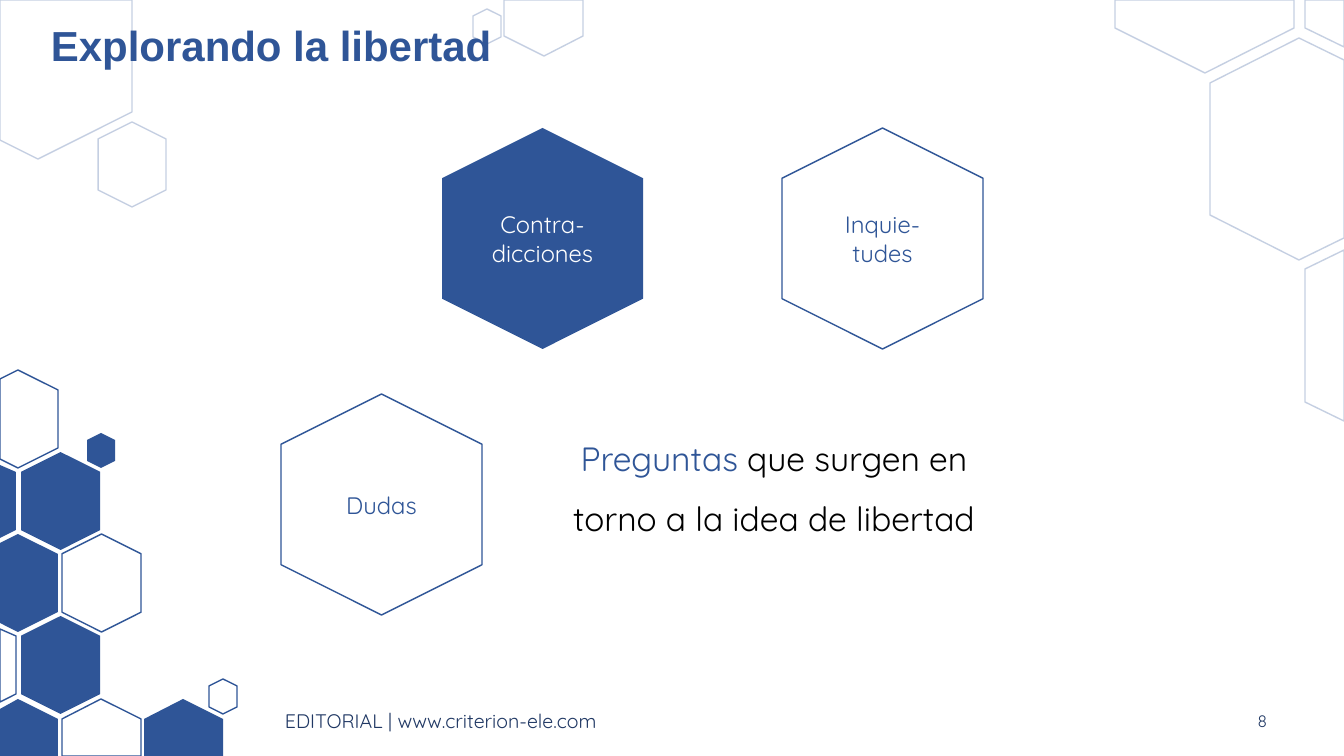
from pptx import Presentation
from pptx.dml.color import RGBColor
from pptx.enum.shapes import MSO_SHAPE
from pptx.enum.text import MSO_ANCHOR, PP_ALIGN
from pptx.oxml.ns import qn
from pptx.util import Emu, Pt
from lxml.etree import SubElement

EMU_PER_PX = 914400 / 100.8
COLORS = {"blue": "2F5597", "navy": "203864", "white": "FFFFFF", "black": "000000"}
FAINT = 28  # line opacity in percent

LABEL = {"name": "Quicksand", "size": Pt(17)}
FOOTER = {"name": "Quicksand", "size": Pt(14)}
NUMBER = {"name": "Quicksand", "size": Pt(12)}
TITLE = {"name": "Arial", "size": Pt(30), "bold": True}
QUESTION = {"name": "Quicksand", "size": Pt(24)}

# Hexagons cut off by the slide edge: outline points
TOP_CUT = [
    [(504, 0), (583, 0), (583, 36), (544, 56), (504, 36)],
    [(1115, 0), (1294, 0), (1294, 28), (1205, 73), (1115, 28)],
    [(1305, 0), (1344, 0), (1344, 47), (1305, 28)],
    [(1299, 38), (1344, 60), (1344, 238), (1299, 260), (1210, 215), (1210, 83)],
    [(0, 0), (132, 0), (132, 112), (38, 159), (0, 140)],
    [(1344, 250), (1344, 421), (1305, 402), (1305, 269)],
]
LEFT_HALF = [(18, 370), (58, 390), (58, 448), (18, 468), (0, 459), (0, 379)]
LEFT_SLIVER = [(0, 465), (16, 472), (16, 530), (0, 538)]
BOTTOM_CORNER = [(18, 699), (58, 719), (58, 756), (0, 756), (0, 709)]
BOTTOM_CUT = [(101, 699), (141, 719), (141, 756), (62, 756), (62, 719)]
ROW_STEP = 164
COLUMN_STEP = 82

# Whole hexagons: left, top
CELL = (79, 98)
DOT = (28, 35)
TOPIC = (201, 221)


def px(value):
    return Emu(round(value * EMU_PER_PX))


def rgb(color):
    return RGBColor.from_string(COLORS[color])


def paint(shape, fill, line=None, opacity=100):
    shape.shadow.inherit = False
    if fill:
        shape.fill.solid()
        shape.fill.fore_color.rgb = rgb(fill)
    else:
        shape.fill.background()
    if not line:
        shape.line.fill.background()
        return
    shape.line.color.rgb = rgb(line)
    shape.line.width = Pt(1)
    if opacity < 100:
        line_color = shape.line._ln.find(".//" + qn("a:srgbClr"))
        SubElement(line_color, qn("a:alpha"), val=str(opacity * 1000))


def add_hexagon(slide, left, top, size, fill, line=None, opacity=100):
    """Place a hexagon standing on a corner; left, top and size are as seen."""
    width, height = size
    shift = (height - width) / 2
    hexagon = slide.shapes.add_shape(
        MSO_SHAPE.HEXAGON, px(left - shift), px(top + shift), px(height), px(width))
    hexagon.rotation = 90
    paint(hexagon, fill, line, opacity)
    return hexagon


def add_cut_hexagon(slide, points, fill, line=None, opacity=100):
    builder = slide.shapes.build_freeform(*points[0], scale=EMU_PER_PX)
    builder.add_line_segments(points[1:], close=True)
    paint(builder.convert_to_shape(), fill, line, opacity)


def moved(points, dx, dy):
    return [(x + dx, y + dy) for x, y in points]


def write(frame, runs, font_format, align=PP_ALIGN.LEFT, spacing=1.0):
    """Fill a text frame with one paragraph of (text, color) runs."""
    frame.word_wrap = True
    frame.vertical_anchor = MSO_ANCHOR.MIDDLE
    paragraph = frame.paragraphs[0]
    paragraph.alignment = align
    paragraph.line_spacing = spacing
    for text, color in runs:
        run = paragraph.add_run()
        run.text = text
        run.font.color.rgb = rgb(color)
        for attribute, value in font_format.items():
            setattr(run.font, attribute, value)


def add_text(slide, box, runs, font_format, **layout):
    frame = slide.shapes.add_textbox(*map(px, box)).text_frame
    write(frame, runs, font_format, **layout)


def add_topic(slide, left, top, label, color, fill=None, line=None):
    frame = add_hexagon(slide, left, top, TOPIC, fill, line).text_frame
    frame._txBody.bodyPr.set("vert", "vert270")
    write(frame, [(label, color)], LABEL, PP_ALIGN.CENTER)


def add_top_decoration(slide):
    add_hexagon(slide, 473, 9, DOT, "white", "blue", FAINT)
    for points in TOP_CUT:
        add_cut_hexagon(slide, points, "white", "blue", FAINT)
    add_hexagon(slide, 98, 122, (68, 85), "white", "blue", FAINT)


def add_honeycomb(slide):
    for row, (half, sliver, outer) in enumerate([
            (("white", "blue"), ("blue",), ("white",)),
            (("blue",), ("white", "blue"), ("white", "blue"))]):
        down = row * ROW_STEP
        add_cut_hexagon(slide, moved(LEFT_HALF, 0, down), *half)
        add_hexagon(slide, 62, 370 + down, CELL, *outer)
        add_cut_hexagon(slide, moved(LEFT_SLIVER, 0, down), *sliver)
        add_hexagon(slide, 21, 452 + down, CELL, "blue")
    add_cut_hexagon(slide, BOTTOM_CORNER, "blue")
    add_cut_hexagon(slide, BOTTOM_CUT, "white", "blue")
    add_cut_hexagon(slide, moved(BOTTOM_CUT, COLUMN_STEP, 0), "blue")
    add_hexagon(slide, 209, 679, DOT, "white", "blue")
    add_hexagon(slide, 87, 433, DOT, "blue")


def main():
    deck = Presentation()
    deck.slide_width, deck.slide_height = px(1344), px(756)
    slide = deck.slides.add_slide(deck.slide_layouts[6])

    add_top_decoration(slide)
    add_honeycomb(slide)

    add_text(slide, (275, 701, 658, 40),
             [("EDITORIAL | www.criterion-ele.com", "navy")], FOOTER)
    add_text(slide, (1177, 701, 100, 40), [("8", "navy")], NUMBER,
             align=PP_ALIGN.RIGHT)
    add_text(slide, (41, 18, 1165, 60), [("Explorando la libertad", "blue")], TITLE,
             spacing=0.9)

    add_topic(slide, 782, 128, "Inquie-tudes", "blue", line="blue")
    add_topic(slide, 281, 394, "Dudas", "blue", line="blue")
    add_topic(slide, 442, 128, "Contra-dicciones", "white", fill="blue")

    add_text(slide, (531, 398, 486, 160),
             [("Preguntas", "blue"),
              (" que surgen en torno a la idea de libertad", "black")],
             QUESTION, align=PP_ALIGN.CENTER, spacing=1.5)

    deck.save("out.pptx")


if __name__ == "__main__":
    main()
